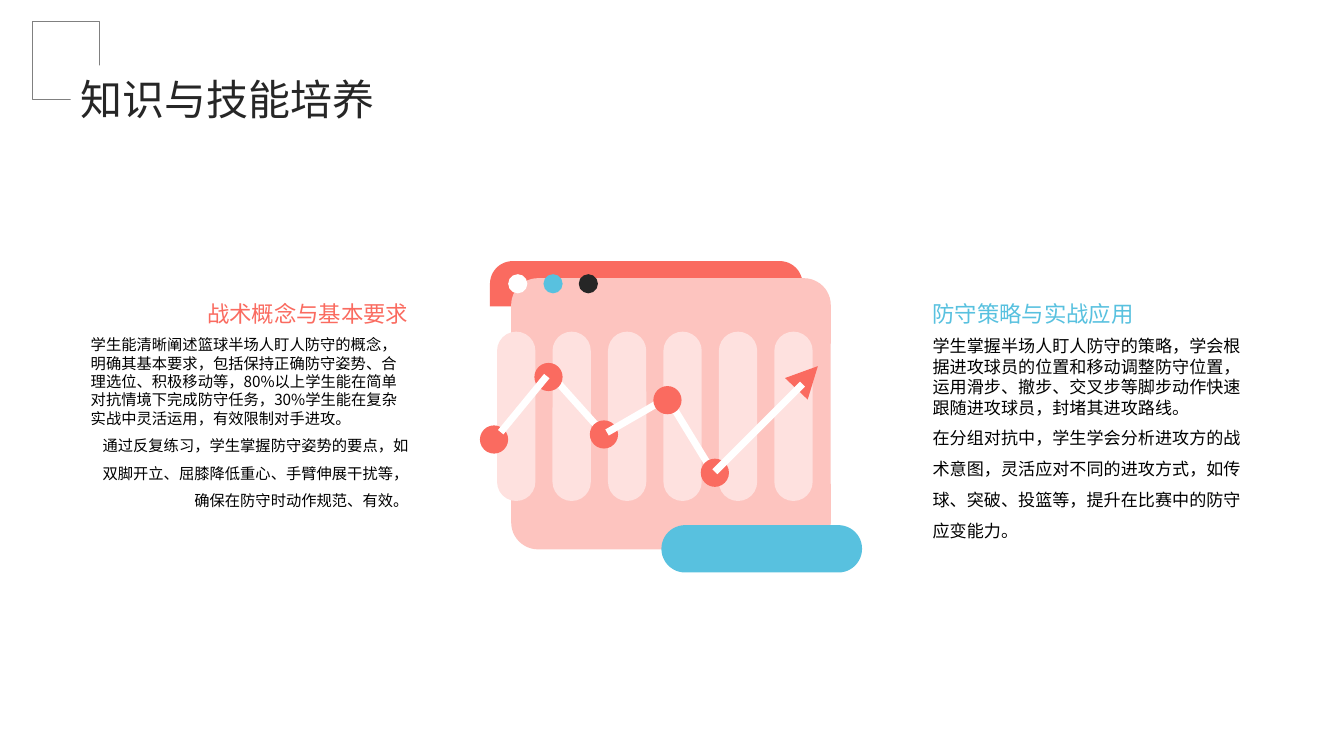
from dataclasses import dataclass
from typing import Optional

from lxml.etree import SubElement
from pptx import Presentation
from pptx.dml.color import RGBColor
from pptx.enum.shapes import MSO_SHAPE as Preset
from pptx.enum.text import MSO_ANCHOR as Anchor, MSO_AUTO_SIZE as AutoSize, PP_ALIGN as Align
from pptx.oxml.ns import qn
from pptx.slide import Slide
from pptx.util import Inches, Pt


@dataclass(frozen=True)
class Theme:
    coral: str = "FA6B60"
    blush: str = "FDC4BF"
    pale: str = "FEE1DF"
    sky: str = "58C1DF"
    ink: str = "262626"
    black: str = "000000"
    white: str = "FFFFFF"
    gray: str = "808080"
    font: str = "Noto Sans CJK SC"
    title_size: float = 30
    heading_size: float = 16
    left_size: float = 10.9
    right_size: float = 12.2


THEME = Theme()


@dataclass(frozen=True)
class Box:
    left: float
    top: float
    width: float
    height: float


@dataclass(frozen=True)
class Figure:
    preset: Preset
    box: Box
    fill: Optional[str] = None
    line: Optional[str] = None
    rotation: float = 0
    corner: Optional[float] = None


@dataclass(frozen=True)
class Passage:
    text: str
    align: Align = Align.LEFT
    spacing: float = 1.5


@dataclass(frozen=True)
class Caption:
    box: Box
    passages: tuple[Passage, ...]
    size: float
    color: str
    anchor: Anchor = Anchor.TOP
    fit: AutoSize = AutoSize.NONE


def draw_figure(slide: Slide, figure: Figure) -> None:
    box = figure.box
    shape = slide.shapes.add_shape(
        figure.preset, Inches(box.left), Inches(box.top), Inches(box.width), Inches(box.height))
    shape.shadow.inherit = False
    shape.rotation = figure.rotation
    if figure.corner is not None:
        shape.adjustments[0] = figure.corner
    if figure.fill:
        shape.fill.solid()
        shape.fill.fore_color.rgb = RGBColor.from_string(figure.fill)
    else:
        shape.fill.background()
    if figure.line:
        shape.line.color.rgb = RGBColor.from_string(figure.line)
        shape.line.width = Pt(0.75)
    else:
        shape.line.fill.background()


def draw_caption(slide: Slide, caption: Caption) -> None:
    box = caption.box
    frame = slide.shapes.add_textbox(
        Inches(box.left), Inches(box.top), Inches(box.width), Inches(box.height)).text_frame
    frame_format = {
        "word_wrap": True, "auto_size": caption.fit, "vertical_anchor": caption.anchor,
        "margin_left": 0, "margin_top": 0, "margin_right": 0, "margin_bottom": 0}
    for key, value in frame_format.items():
        setattr(frame, key, value)
    for index, passage in enumerate(caption.passages):
        paragraph = frame.add_paragraph() if index else frame.paragraphs[0]
        paragraph.alignment = passage.align
        paragraph.line_spacing = passage.spacing
        run = paragraph.add_run()
        run.text = passage.text
        for key, value in {"size": Pt(caption.size), "name": THEME.font}.items():
            setattr(run.font, key, value)
        run.font.color.rgb = RGBColor.from_string(caption.color)
        SubElement(run.font._element, qn("a:ea"), typeface=THEME.font)


def disc(left: float, top: float, size: float, fill: str) -> Figure:
    return Figure(Preset.OVAL, Box(left, top, size, size), fill)


def node(left: float, top: float) -> Figure:
    return disc(left, top, 0.28, THEME.coral)


def segment(left: float, top: float, length: float, rotation: float) -> Figure:
    return Figure(Preset.RECTANGLE, Box(left, top, 0.07, length), THEME.white, rotation=rotation)


WINDOW = [
    Figure(Preset.RECTANGLE, Box(5.07, 3.31, 3.17, 1.81), THEME.blush),
    Figure(Preset.ROUND_2_SAME_RECTANGLE, Box(4.86, 2.59, 3.1, 0.45), THEME.coral, corner=0.5),
    Figure(Preset.ROUND_2_SAME_RECTANGLE, Box(5.07, 2.76, 3.17, 0.65), THEME.blush, corner=0.41),
    Figure(Preset.ROUND_2_SAME_RECTANGLE, Box(5.07, 4.8, 3.17, 0.65), THEME.blush,
           rotation=180, corner=0.41),
]
COLUMNS = [
    Figure(Preset.ROUNDED_RECTANGLE, Box(4.93 + 0.55 * i, 3.29, 0.38, 1.68), THEME.pale, corner=0.5)
    for i in range(6)
]
BUTTONS = [
    disc(5.04 + 0.35 * i, 2.72, 0.19, fill)
    for i, fill in enumerate((THEME.white, THEME.sky, THEME.ink))
]
TREND = [
    segment(5.71, 3.69, 0.68, 318.1),
    segment(6.82, 3.95, 0.76, 328.6),
    node(5.3, 3.6),
    node(6.95, 4.55),
    node(4.76, 4.22),
    segment(5.16, 3.65, 0.72, 39.4),
    node(5.85, 4.17),
    segment(6.28, 3.78, 0.68, 240),
    Figure(Preset.ISOSCELES_TRIANGLE, Box(7.85, 3.59, 0.31, 0.31), THEME.coral, rotation=43.5),
    segment(7.49, 3.63, 1.23, 225),
    node(6.48, 3.83),
]
BADGE = Figure(Preset.ROUNDED_RECTANGLE, Box(6.56, 5.21, 1.99, 0.47), THEME.sky, corner=0.5)
TITLE_CORNER = [
    Figure(Preset.RECTANGLE, Box(0.32, 0.21, 0.67, 0.78), line=THEME.gray),
    Figure(Preset.RECTANGLE, Box(0.7, 0.65, 0.61, 0.5), THEME.white),
]

CAPTIONS = [
    Caption(Box(0.9, 2.79, 3.15, 0.45), (Passage("战术概念与基本要求", Align.RIGHT),),
            THEME.heading_size, THEME.coral, Anchor.BOTTOM),
    Caption(Box(0.9, 3.33, 3.15, 2.15), (
        Passage("学生能清晰阐述篮球半场人盯人防守的概念，明确其基本要求，包括保持正确防守姿势、合理选位、积极移动等，"
                "80%以上学生能在简单对抗情境下完成防守任务，30%学生能在复杂实战中灵活运用，有效限制对手进攻。",
                spacing=1),
        Passage("通过反复练习，学生掌握防守姿势的要点，如双脚开立、屈膝降低重心、手臂伸展干扰等，"
                "确保在防守时动作规范、有效。", Align.RIGHT),
    ), THEME.left_size, THEME.black),
    Caption(Box(9.25, 2.79, 3.15, 0.45), (Passage("防守策略与实战应用"),),
            THEME.heading_size, THEME.sky, Anchor.BOTTOM),
    Caption(Box(9.25, 3.33, 3.15, 2.15), (
        Passage("学生掌握半场人盯人防守的策略，学会根据进攻球员的位置和移动调整防守位置，"
                "运用滑步、撤步、交叉步等脚步动作快速跟随进攻球员，封堵其进攻路线。", spacing=1),
        Passage("在分组对抗中，学生学会分析进攻方的战术意图，灵活应对不同的进攻方式，"
                "如传球、突破、投篮等，提升在比赛中的防守应变能力。"),
    ), THEME.right_size, THEME.black),
    Caption(Box(0.8, 0.68, 11.1, 0.46), (Passage("知识与技能培养", spacing=1.1),),
            THEME.title_size, THEME.ink, fit=AutoSize.SHAPE_TO_FIT_TEXT),
]


def main() -> None:
    presentation = Presentation()
    presentation.slide_width = Inches(13.33)
    presentation.slide_height = Inches(7.5)
    slide = presentation.slides.add_slide(presentation.slide_layouts[6])
    for figure in [*WINDOW, *COLUMNS, *BUTTONS, *TREND, BADGE, *TITLE_CORNER]:
        draw_figure(slide, figure)
    for caption in CAPTIONS:
        draw_caption(slide, caption)
    presentation.save("out.pptx")


if __name__ == "__main__":
    main()
